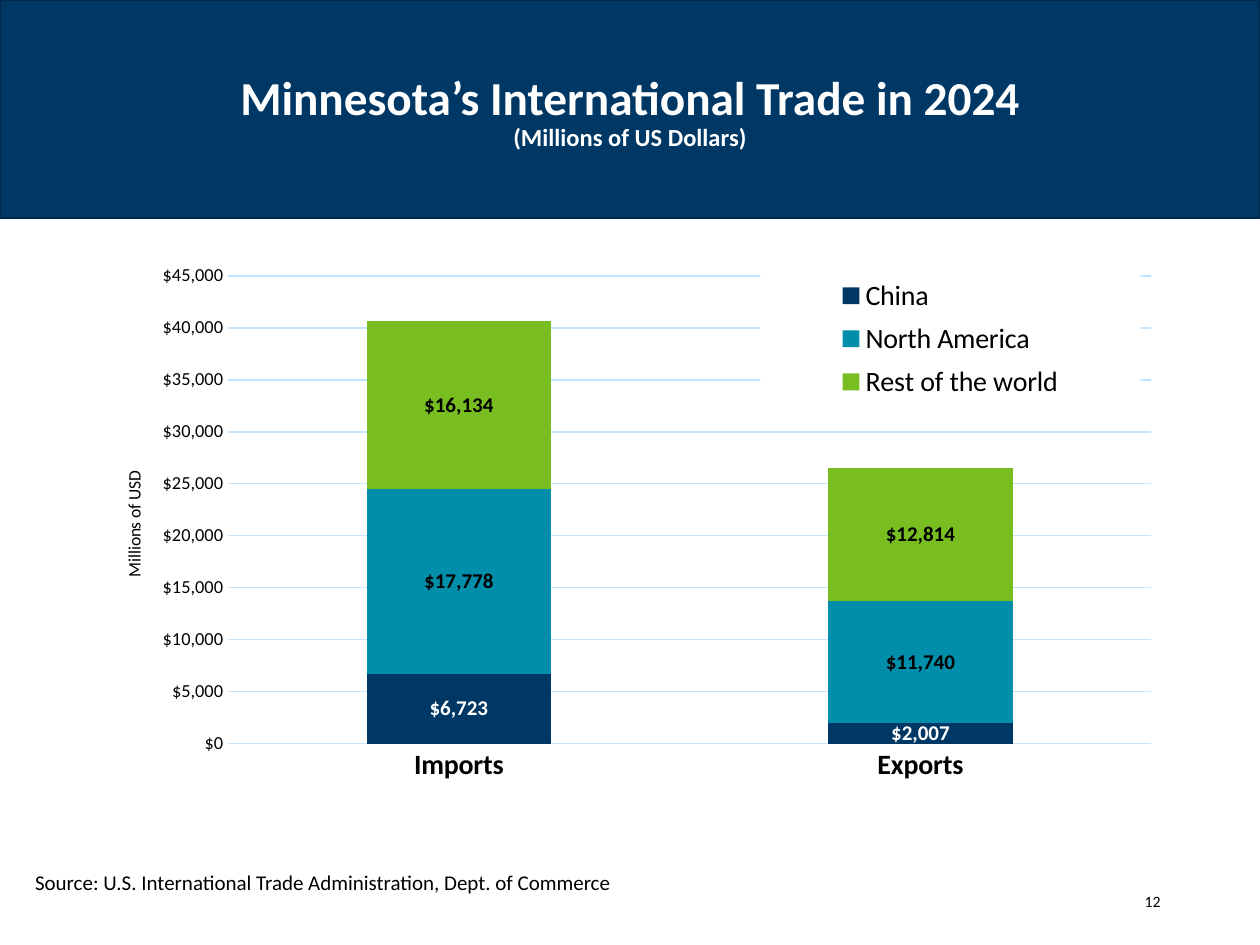
from lxml.etree import SubElement
from pptx import Presentation
from pptx.chart.data import CategoryChartData
from pptx.dml.color import RGBColor as RGB
from pptx.enum.chart import XL_CHART_TYPE as ChartType, XL_LEGEND_POSITION as LegendPos, XL_TICK_MARK as Tick
from pptx.enum.shapes import MSO_SHAPE as Shape
from pptx.enum.text import MSO_ANCHOR as Anchor, PP_ALIGN as Align
from pptx.oxml import parse_xml
from pptx.oxml.ns import nsdecls, qn
from pptx.util import Inches, Pt

COLORS = {"navy": "003865", "edge": "00294B", "teal": "008EAA", "green": "78BE21",
          "grid": "C2E4FF", "white": "FFFFFF", "black": "000000"}
DOLLARS = '"$"#,##0'

deck = Presentation()
deck.slide_width, deck.slide_height = Inches(10), Inches(7.5)
slide = deck.slides.add_slide(deck.slide_layouts[6])
COL, ROW = deck.slide_width / 100, deck.slide_height / 75


def area(col, row, cols, rows):
    return int(col * COL), int(row * ROW), int(cols * COL), int(rows * ROW)


def style(font, size, color="black", bold=False):
    font.name, font.size, font.bold = "Calibri", Pt(size), bold
    font.color.rgb = RGB.from_string(COLORS[color])


# Header band
band = slide.shapes.add_shape(Shape.RECTANGLE, *area(0, 0, 100, 17.3))
band.shadow.inherit = False
band.fill.solid()
band.fill.fore_color.rgb = RGB.from_string(COLORS["navy"])
band.line.color.rgb = RGB.from_string(COLORS["edge"])
band.line.width = Pt(0.85)

# Title, page number and source
texts = [
    ((6.9, 4, 86.2, 10), Align.CENTER, Anchor.MIDDLE, "white", True,
     [("Minnesota’s International Trade in 2024", 27), ("(Millions of US Dollars)", 14)]),
    ((81.1, 69.5, 12, 4), Align.RIGHT, Anchor.MIDDLE, "black", False, [("12", 9)]),
    ((1.8, 68.5, 50, 3), Align.LEFT, Anchor.TOP, "black", False,
     [("Source: U.S. International Trade Administration, Dept. of Commerce", 12)]),
]
for place, align, anchor, color, bold, lines in texts:
    frame = slide.shapes.add_textbox(*area(*place)).text_frame
    frame.word_wrap, frame.vertical_anchor = True, anchor
    for number, (line, size) in enumerate(lines):
        paragraph = frame.add_paragraph() if number else frame.paragraphs[0]
        paragraph.text, paragraph.alignment = line, align
        if len(lines) > 1:
            paragraph.line_spacing = 0.9
        style(paragraph.font, size, color, bold)

# Trade by partner
partners = [("China", (6723, 2007), "navy", "white"),
            ("North America", (17778, 11740), "teal", "black"),
            ("Rest of the world", (16134, 12814), "green", "black")]
trade = CategoryChartData(number_format=DOLLARS)
trade.categories = ["Imports", "Exports"]
for partner, values, _, _ in partners:
    trade.add_series(partner, values)
chart = slide.shapes.add_chart(ChartType.COLUMN_STACKED, *area(6.9, 20, 86.2, 47.6), trade).chart
style(chart.font, 10)
chart.has_title = False
columns = chart.plots[0]
columns.gap_width, columns.overlap, columns.vary_by_categories = 150, 100, False
for series, (_, _, fill, label_color) in zip(columns.series, partners):
    series.format.fill.solid()
    series.format.fill.fore_color.rgb = RGB.from_string(COLORS[fill])
    labels = series.data_labels
    labels.show_value = True
    labels.number_format, labels.number_format_is_linked = DOLLARS, False
    style(labels.font, 12, label_color, True)

# Axes
flow_axis, dollar_axis = chart.category_axis, chart.value_axis
for axis, size, bold in [(flow_axis, 16, True), (dollar_axis, 10.5, False)]:
    axis.major_tick_mark = axis.minor_tick_mark = Tick.NONE
    axis.format.line.fill.background()
    style(axis.tick_labels.font, size, bold=bold)
dollar_axis.minimum_scale, dollar_axis.maximum_scale, dollar_axis.major_unit = 0, 45000, 5000
dollar_axis.tick_labels.number_format = DOLLARS
dollar_axis.tick_labels.number_format_is_linked = False
dollar_axis.major_gridlines.format.line.color.rgb = RGB.from_string(COLORS["grid"])
dollar_axis.major_gridlines.format.line.width = Pt(0.75)
unit = dollar_axis.axis_title.text_frame.paragraphs[0]
unit.text = "Millions of USD"
style(unit.font, 10)

# Legend on a white panel over the gridlines
chart.has_legend = True
legend = chart.legend
legend.position, legend.include_in_layout = LegendPos.BOTTOM, True
style(legend.font, 16)
legend_xml = chart.element.find(".//" + qn("c:legend"))
legend_xml.find(qn("c:overlay")).addnext(parse_xml(
    f'<c:spPr {nsdecls("c", "a")}><a:solidFill><a:srgbClr val="{COLORS["white"]}"/></a:solidFill></c:spPr>'))

# Placement inside the chart, as shares of its size
plot_xml = chart.element.find(".//" + qn("c:plotArea"))
title_xml = plot_xml.find(".//" + qn("c:title"))
placements = [(plot_xml, 0, {"x": 0.13, "y": 0.04, "w": 0.85, "h": 0.78}),
              (legend_xml, 1, {"x": 0.62, "y": 0.03, "w": 0.35, "h": 0.23}),
              (title_xml, 1, {"x": 0.03, "y": 0.36})]
for part, index, shares in placements:
    for automatic in part.findall(qn("c:layout")):
        part.remove(automatic)
    layout = parse_xml(f'<c:layout {nsdecls("c")}><c:manualLayout/></c:layout>')
    manual = layout[0]
    if part is plot_xml:
        SubElement(manual, qn("c:layoutTarget")).set("val", "inner")
    for side in "xy":
        SubElement(manual, qn(f"c:{side}Mode")).set("val", "edge")
    for side, share in shares.items():
        SubElement(manual, qn(f"c:{side}")).set("val", str(share))
    part.insert(index, layout)

deck.save("out.pptx")
